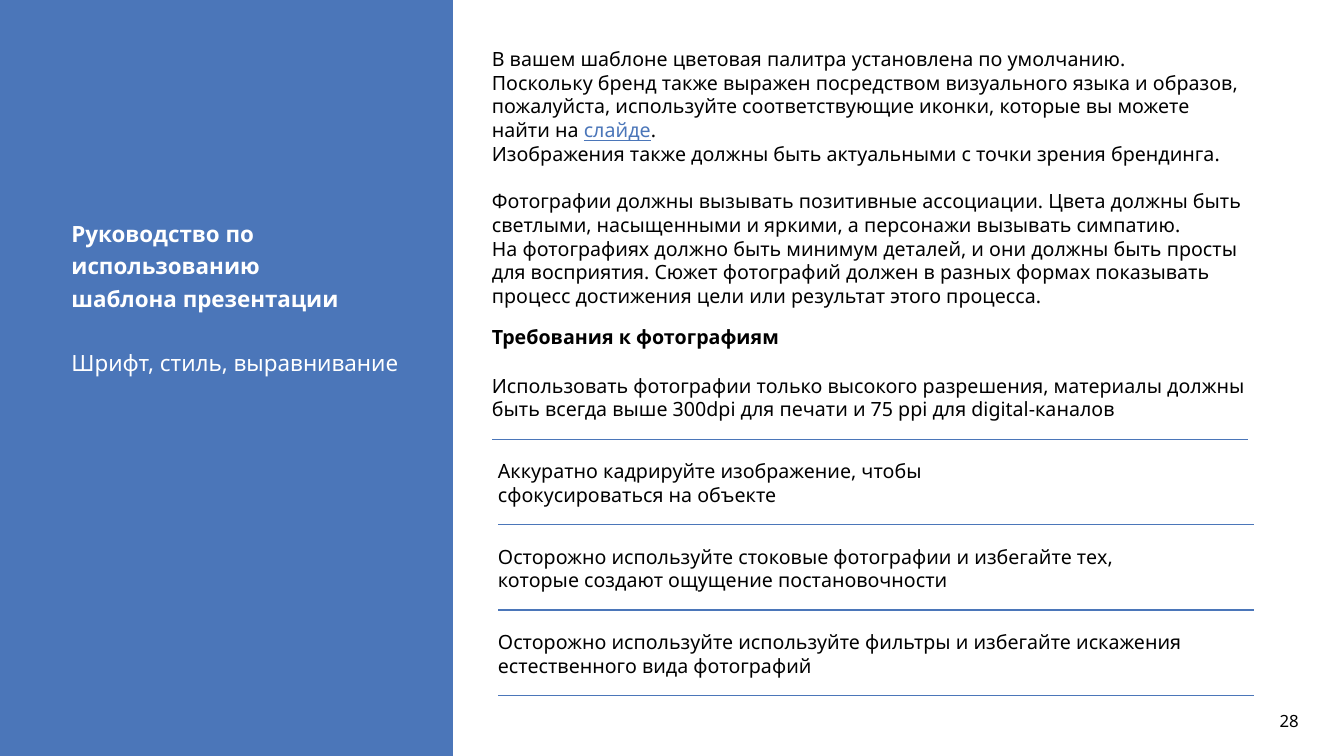
import pptx
import pptx.util
import pptx.dml.color
import pptx.enum.text
import pptx.enum.shapes
import pptx.oxml.ns
import lxml.etree

BLUE, WHITE, BLACK = "4B76B9", "FFFFFF", "000000"
ALIGN = pptx.enum.text.PP_ALIGN
ANCHOR = pptx.enum.text.MSO_ANCHOR


def colour(hex_value):
    return pptx.dml.color.RGBColor.from_string(hex_value)


def apply(target, values):
    for name, value in values.items():
        setattr(target, name, value)


class GuideSlide:
    """Slide builder; all lengths are percentages of the slide's size."""
    font = "Noto Sans"
    line_width = pptx.util.Pt(1)

    def __init__(self, deck):
        self.width, self.height = deck.slide_width, deck.slide_height
        self.shapes = deck.slides.add_slide(deck.slide_layouts[6]).shapes

    def place(self, x, y, w, h):
        return [round(share * size / 100) for share, size in
                zip((x, y, w, h), (self.width, self.height) * 2)]

    def panel(self, box, fill):
        panel = self.shapes.add_shape(
            pptx.enum.shapes.MSO_SHAPE.RECTANGLE, *self.place(*box))
        panel.shadow.inherit = False
        panel.fill.solid()
        panel.fill.fore_color.rgb = colour(fill)
        panel.line.color.rgb = colour(fill)
        panel.line.width = self.line_width

    def rule(self, x, y, w):
        left, top, length, _ = self.place(x, y, w, 0)
        rule = self.shapes.add_connector(
            pptx.enum.shapes.MSO_CONNECTOR.STRAIGHT, left, top, left + length, top)
        rule.line.color.rgb = colour(BLUE)
        rule.line.width = self.line_width
        lxml.etree.SubElement(rule.element.spPr, pptx.oxml.ns.qn("a:effectLst"))

    def text(self, box, paragraphs, frame=None, layout=None, **style):
        """Each paragraph is a list of (words, font changes) pairs or a string."""
        text_frame = self.shapes.add_textbox(*self.place(*box)).text_frame
        apply(text_frame, {"word_wrap": True, **(frame or {})})
        for index, runs in enumerate(paragraphs):
            paragraph = text_frame.add_paragraph() if index else text_frame.paragraphs[0]
            apply(paragraph, layout or {})
            for words, changes in [(runs, {})] if isinstance(runs, str) else runs:
                run = paragraph.add_run()
                run.text = words
                values = {"size": 14, "color": BLACK, **style, **changes}
                run.font.color.rgb = colour(values.pop("color"))
                values["size"] = pptx.util.Pt(values["size"])
                apply(run.font, {"name": self.font, **values})
        return text_frame


def main():
    deck = pptx.Presentation()
    deck.slide_width = pptx.util.Inches(13.33)
    deck.slide_height = pptx.util.Inches(7.5)
    guide = GuideSlide(deck)

    # Side panel with title and subtitle
    guide.panel((0, 0, 33.68, 100), BLUE)
    title = guide.text(
        (4.58, 23.2, 25.96, 30.8),
        ["Руководство по использованию", "шаблона презентации",
         [("Шрифт, стиль, выравнивание", {"bold": False})]],
        frame={"vertical_anchor": ANCHOR.BOTTOM, "margin_bottom": pptx.util.Inches(0.32)},
        layout={"line_spacing": 1.2}, size=16, color=WHITE, bold=True)
    title.paragraphs[-1].space_before = pptx.util.Pt(23)

    # Slide number
    guide.text((93.32, 92.67, 4.05, 5.33), ["28"],
               frame={"vertical_anchor": ANCHOR.MIDDLE},
               layout={"alignment": ALIGN.RIGHT}, size=12)

    # Branding and photo guidance
    left, width = 35.86, 59.19
    guide.text((left, 5.6, 61.97, 17.07), [
        "В вашем шаблоне цветовая палитра установлена по умолчанию.",
        "Поскольку бренд также выражен посредством визуального языка и образов, "
        "пожалуйста, используйте соответствующие иконки, которые вы можете",
        [("найти на ", {}), ("слайде", {"color": BLUE, "underline": True}), (".", {})],
        "Изображения также должны быть актуальными с точки зрения брендинга."])
    guide.text((left, 24.4, width, 17.07), [
        "Фотографии должны вызывать позитивные ассоциации. Цвета должны быть "
        "светлыми, насыщенными и яркими, а персонажи вызывать симпатию.",
        "На фотографиях должно быть минимум деталей, и они должны быть просты "
        "для восприятия. Сюжет фотографий должен в разных формах показывать "
        "процесс достижения цели или результат этого процесса."])
    guide.text((left, 42.27, width, 4.53), ["Требования к фотографиям"], bold=True)

    # Photo requirements, each closed by a rule
    requirements = [
        ["Использовать фотографии только высокого разрешения, материалы должны "
         "быть всегда выше 300dpi для печати и 75 ppi для digital-каналов"],
        ["Аккуратно кадрируйте изображение, чтобы", "сфокусироваться на объекте"],
        ["Осторожно используйте стоковые фотографии и избегайте тех,",
         "которые создают ощущение постановочности"],
        ["Осторожно используйте используйте фильтры и избегайте искажения "
         "естественного вида фотографий"],
    ]
    for index, requirement in enumerate(requirements):
        item_left = left + (0.45 if index else 0)
        item_top = 48.8 + 11.29 * index
        guide.text((item_left, item_top, width, 7.6), requirement)
        guide.rule(item_left + 0.75, item_top + 9.33, 56.26)

    deck.save("out.pptx")


if __name__ == "__main__":
    main()
